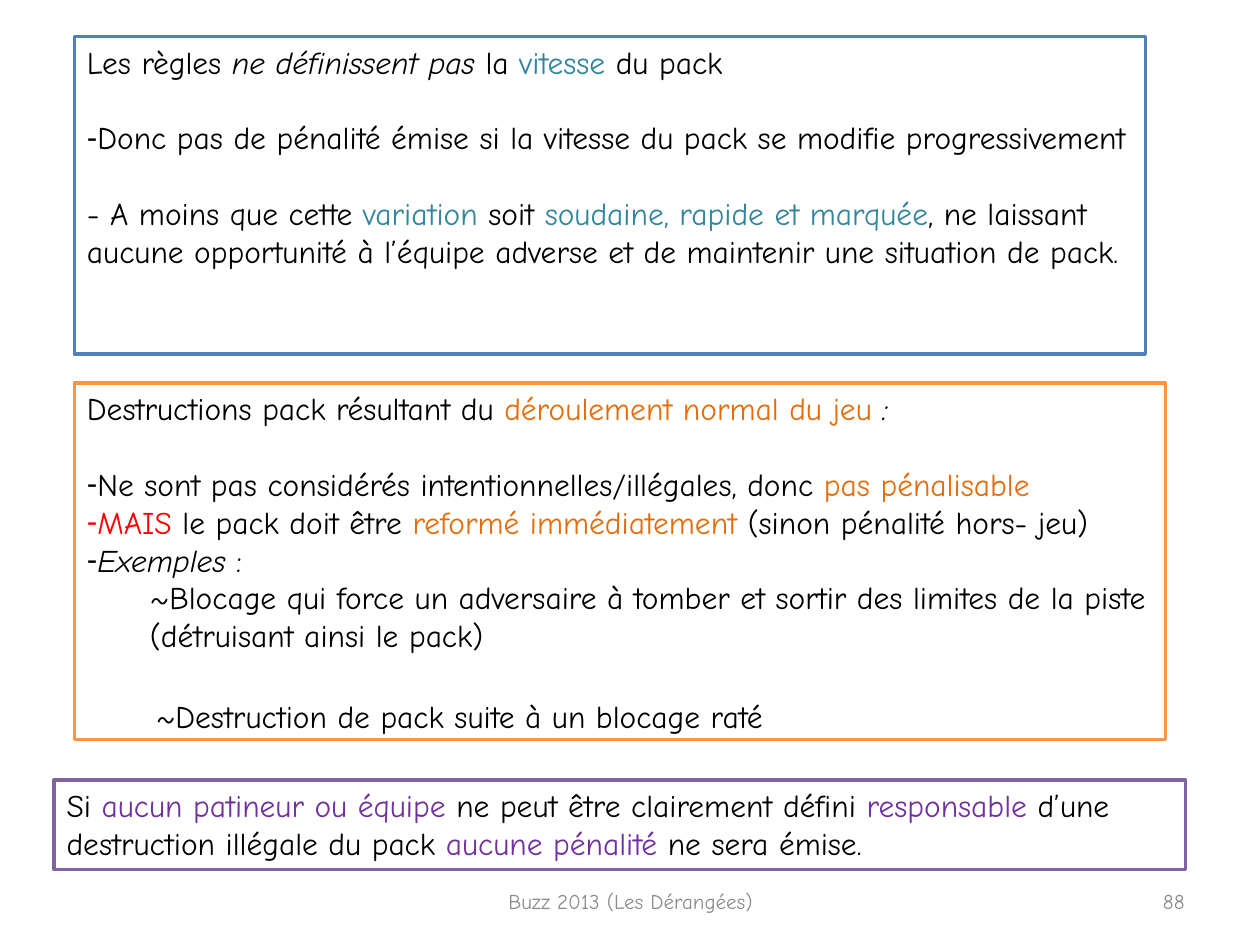
from lxml import etree
from pptx import Presentation
from pptx import util as u
from pptx.dml.color import RGBColor
from pptx.enum import shapes, text
from pptx.oxml.ns import qn

FONT = "Comic Neue"
BLACK, GREY, RED = "000000", "8C8C8C", "FF0000"
TEAL, ORANGE, PURPLE = "31859C", "E46C0A", "7030A0"
LINE = 21.6  # height of one text line, in points


def paint(target, color):
    """Give a fill or a font a solid colour."""
    fill = getattr(target, "fill", target)
    fill.solid()
    fill.fore_color.rgb = RGBColor.from_string(color)


def write(para, words, color=BLACK, size=18, italic=False):
    span = para.add_run()
    span.text = words
    span.font.name = FONT
    span.font.size = u.Pt(size)
    span.font.italic = italic
    paint(span.font, color)


deck = Presentation()
deck.slide_width, deck.slide_height = u.Inches(10), u.Inches(7.5)
page = deck.slides.add_slide(deck.slide_layouts[3])  # two content areas
title = page.shapes.title
title.element.getparent().remove(title.element)
speed_box, destruction_box = page.placeholders
blame_box = page.shapes.add_shape(shapes.MSO_SHAPE.RECTANGLE, 0, 0, 0, 0)
blame_box.shadow.inherit = False

# Each paragraph: bullet, left indent, space before, spans of (words, format)
speed = [
    ("", 0, 0, [("Les règles ", {}), ("ne définissent pas", {"italic": True}),
                (" la ", {}), ("vitesse", {"color": TEAL}), (" du pack", {})]),
    ("-", 0, LINE, [("Donc pas de pénalité émise si la vitesse du pack "
                     "se modifie progressivement", {})]),
    ("", 0, LINE, [("- A moins que cette ", {}), ("variation ", {"color": TEAL}),
                   ("soit", {}),
                   (" soudaine, rapide et marquée", {"color": TEAL}),
                   (", ne laissant aucune opportunité à l’équipe adverse et de "
                    "maintenir une situation de pack.", {})]),
]
destruction = [
    ("", 0, 0, [("Destructions pack résultant du ", {}),
                ("déroulement normal du jeu ", {"color": ORANGE}),
                (":", {"italic": True})]),
    ("-", 0, LINE, [("Ne sont pas considérés intentionnelles/illégales, donc ", {}),
                    ("pas pénalisable", {"color": ORANGE})]),
    ("-", 0, 0, [("MAIS", {"color": RED}), (" le pack doit être ", {}),
                 ("reformé immédiatement ", {"color": ORANGE}),
                 ("(sinon pénalité hors- jeu)", {})]),
    ("-", 0, 0, [("Exemples ", {"italic": True}), (":", {})]),
    ("", 0.5, 0, [("~Blocage qui force un adversaire à tomber et sortir des "
                   "limites de la piste (détruisant ainsi le pack)", {})]),
]
blame = [
    ("", 0, 0, [("Si ", {}), ("aucun patineur ou équipe", {"color": PURPLE}),
                (" ne peut être clairement défini ", {}),
                ("responsable", {"color": PURPLE}),
                (" d’une destruction illégale du pack ", {}),
                ("aucune pénalité", {"color": PURPLE}),
                (" ne sera émise.", {})]),
]

# Framed boxes
for box, place, border, content in (
    (speed_box, (0.59, 0.29, 8.5, 2.52), "4F81BD", speed),
    (destruction_box, (0.59, 3.04, 8.66, 2.83), "F79646", destruction),
    (blame_box, (0.43, 6.19, 8.98, 0.71), "8064A2", blame),
):
    box.left, box.top, box.width, box.height = map(u.Inches, place)
    paint(box, "FFFFFF")
    paint(box.line, border)
    box.line.width = u.Pt(2)
    frame = box.text_frame
    frame.word_wrap = True
    frame.auto_size = text.MSO_AUTO_SIZE.NONE
    frame.vertical_anchor = text.MSO_ANCHOR.TOP
    for number, (bullet, indent, before, spans) in enumerate(content):
        para = frame.add_paragraph() if number else frame.paragraphs[0]
        para.alignment = text.PP_ALIGN.LEFT
        para.level = 1 if indent else 0
        para.space_before = u.Pt(before)
        props = para._p.get_or_add_pPr()
        props.set("marL", str(u.Inches(indent)))
        props.set("indent", "0")
        if bullet:
            etree.SubElement(props, qn("a:buFontTx"))
            etree.SubElement(props, qn("a:buChar"), char=bullet)
        else:
            etree.SubElement(props, qn("a:buNone"))
        for words, style in spans:
            write(para, words, **style)

# Second example, footer and page number
for words, place, align, anchor, style in (
    ("~Destruction de pack suite à un blocage raté", (1.14, 5.48, 7.64, 0.4),
     text.PP_ALIGN.LEFT, text.MSO_ANCHOR.TOP, {}),
    ("Buzz 2013 (Les Dérangées)", (3.42, 6.95, 3.17, 0.4),
     text.PP_ALIGN.CENTER, text.MSO_ANCHOR.MIDDLE, {"color": GREY, "size": 12}),
    ("88", (7.17, 6.95, 2.33, 0.4),
     text.PP_ALIGN.RIGHT, text.MSO_ANCHOR.MIDDLE, {"color": GREY, "size": 12}),
):
    label = page.shapes.add_textbox(*map(u.Inches, place))
    label.text_frame.word_wrap = True
    label.text_frame.vertical_anchor = anchor
    para = label.text_frame.paragraphs[0]
    para.alignment = align
    write(para, words, **style)

deck.save("out.pptx")
